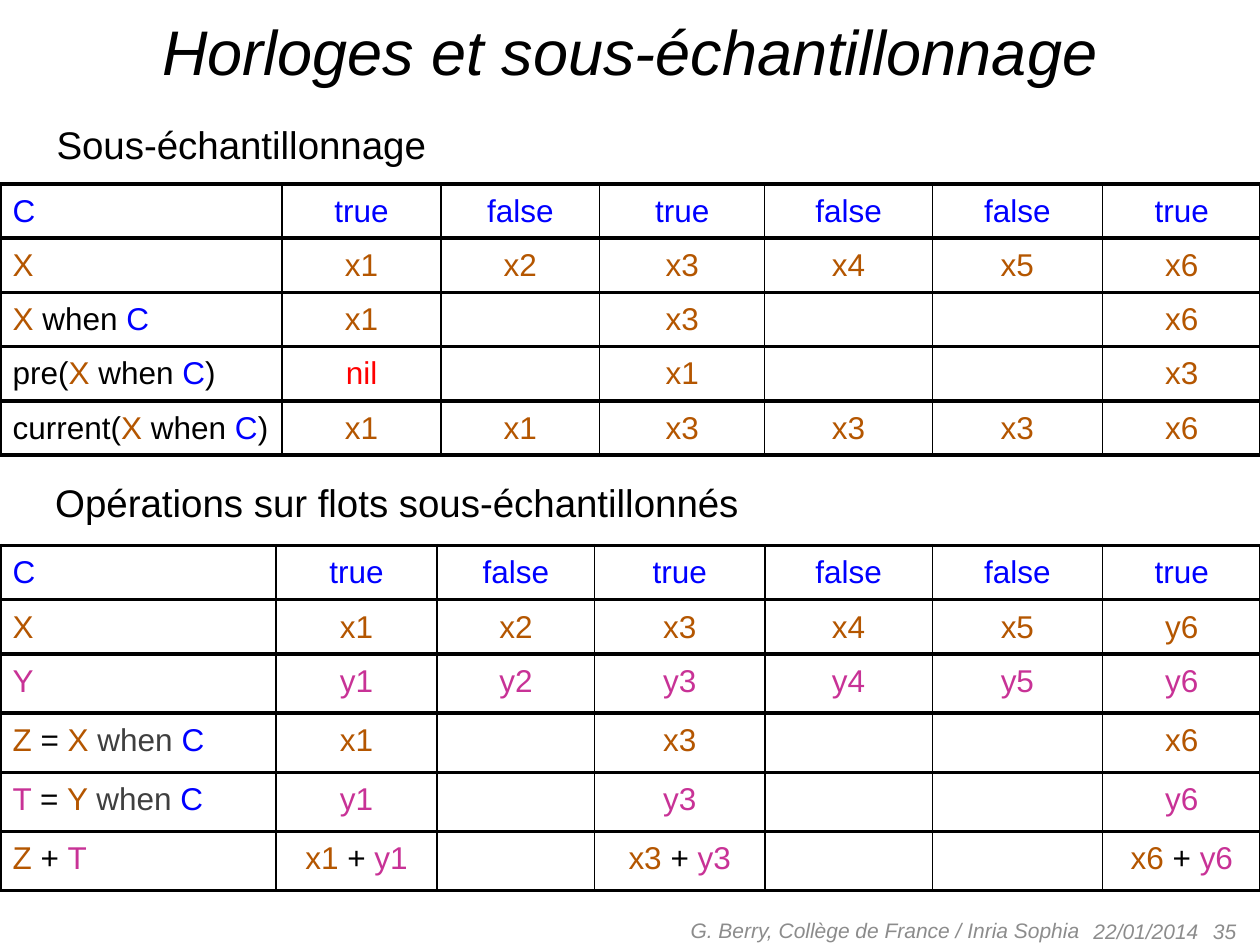
from lxml import etree
from pptx import Presentation
from pptx.dml.color import RGBColor
from pptx.enum.text import MSO_ANCHOR, PP_ALIGN
from pptx.oxml.ns import qn
from pptx.util import Inches, Pt

LEFT, MID, RIGHT = PP_ALIGN.LEFT, PP_ALIGN.CENTER, PP_ALIGN.RIGHT
TOP, CENTER = MSO_ANCHOR.TOP, MSO_ANCHOR.MIDDLE

THEME = {
    "font": "Arial",
    "size": {"title": 36, "head": 22, "cell": 18, "foot": 12},
    "ink": {
        "black": "000000", "blue": "0000FF", "brown": "B45600",
        "pink": "C83296", "red": "FF0000", "dark": "3F3F3F", "gray": "8C8C8C",
    },
    "thick": 2.25,
    "thin": 1,
}

TEXTS = [
    ("Horloges et sous-échantillonnage", (0.25, 0.05, 9.5, 0.71), "title", "black", MID, TOP, True),
    ("Sous-échantillonnage", (0.35, 0.91, 9.61, 0.47), "head", "black", LEFT, TOP, False),
    ("Opérations sur flots sous-échantillonnés", (0.34, 3.75, 5.9, 0.47), "head", "black", LEFT, TOP, False),
    ("22/01/2014", (8.58, 7.19, 1.25, 0.4), "foot", "gray", LEFT, CENTER, True),
    ("35", (7.58, 7.19, 2.33, 0.4), "foot", "gray", RIGHT, CENTER, True),
    ("G. Berry, Collège de France / Inria Sophia", (4.61, 7.18, 4.06, 0.4), "foot", "gray", RIGHT, CENTER, True),
]

X, C = ("X", "brown"), ("C", "blue")
WHEN, CLOSE = (" when ", "black"), (")", "black")
EQUAL, GRAY_WHEN = ("= ", "black"), ("when ", "dark")
CLOCK = ([C], "blue", ["true", "false", "true", "false", "false", "true"])


def add_up(num):
    return [(f"x{num} ", "brown"), ("+ ", "black"), (f"y{num}", "pink")]


TABLES = [
    {
        "top": 1.46,
        "cols": [2.24, 1.26, 1.26, 1.31, 1.33, 1.35, 1.26],
        "rows": [0.43] * 5,
        "cells": [
            CLOCK,
            ([X], "brown", ["x1", "x2", "x3", "x4", "x5", "x6"]),
            ([X, WHEN, C], "brown", ["x1", "", "x3", "", "", "x6"]),
            ([("pre(", "black"), X, WHEN, C, CLOSE], "brown",
             [[("nil", "red")], "", "x1", "", "", "x3"]),
            ([("current(", "black"), X, WHEN, C, CLOSE], "brown",
             ["x1", "x1", "x3", "x3", "x3", "x6"]),
        ],
    },
    {
        "top": 4.33,
        "cols": [2.19, 1.28, 1.25, 1.35, 1.33, 1.35, 1.26],
        "rows": [0.43] * 2 + [0.47] * 4,
        "cells": [
            CLOCK,
            ([X], "brown", ["x1", "x2", "x3", "x4", "x5", "y6"]),
            ([("Y", "pink")], "pink", ["y1", "y2", "y3", "y4", "y5", "y6"]),
            ([("Z ", "brown"), EQUAL, ("X ", "brown"), GRAY_WHEN, C], "brown",
             ["x1", "", "x3", "", "", "x6"]),
            ([("T ", "pink"), EQUAL, ("Y ", "brown"), GRAY_WHEN, C], "pink",
             ["y1", "", "y3", "", "", "y6"]),
            ([("Z ", "brown"), ("+ ", "black"), ("T", "pink")], "black",
             [add_up(1), "", add_up(3), "", "", add_up(6)]),
        ],
    },
]


def write(para, runs, size, align, slant=False):
    para.alignment = align
    para.font.size = Pt(THEME["size"][size])
    for text, ink in runs:
        run = para.add_run()
        run.text = text
        font = run.font
        font.name = THEME["font"]
        font.size = Pt(THEME["size"][size])
        font.italic = slant
        font.color.rgb = RGBColor.from_string(THEME["ink"][ink])


def add_text(slide, text, box, size, ink, align, anchor, slant):
    frame = slide.shapes.add_textbox(*map(Inches, box)).text_frame
    frame.word_wrap = True
    frame.vertical_anchor = anchor
    write(frame.paragraphs[0], [(text, ink)], size, align, slant)


def rule(cell, first, last):
    thick, thin = THEME["thick"], THEME["thin"]
    sides = {"lnL": thick if first else thin, "lnR": thick if last else thin,
             "lnT": thick, "lnB": thick}
    props = cell._tc.get_or_add_tcPr()
    for place, (side, width) in enumerate(sides.items()):
        line = etree.Element(qn(f"a:{side}"), w=str(Pt(width)))
        fill = etree.SubElement(line, qn("a:solidFill"))
        etree.SubElement(fill, qn("a:srgbClr"), val=THEME["ink"]["black"])
        props.insert(place, line)


def add_grid(slide, data):
    cols, rows = data["cols"], data["rows"]
    size = map(Inches, (0, data["top"], sum(cols), sum(rows)))
    grid = slide.shapes.add_table(len(rows), len(cols), *size).table
    grid.first_row = grid.horz_banding = False
    for col, width in zip(grid.columns, cols):
        col.width = Inches(width)
    for row, height, (head, ink, vals) in zip(grid.rows, rows, data["cells"]):
        row.height = Inches(height)
        for spot, (cell, val) in enumerate(zip(row.cells, [head] + vals)):
            cell.fill.background()
            rule(cell, spot == 0, spot == len(cols) - 1)
            runs = [(val, ink)] if isinstance(val, str) and val else val
            para = cell.text_frame.paragraphs[0]
            para.line_spacing = 1.1
            write(para, runs, "cell", MID if spot else LEFT)


def main():
    deck = Presentation()
    deck.slide_width, deck.slide_height = Inches(10), Inches(7.5)
    slide = deck.slides.add_slide(deck.slide_layouts[6])
    for item in TEXTS:
        add_text(slide, *item)
    for data in TABLES:
        add_grid(slide, data)
    deck.save("out.pptx")


if __name__ == "__main__":
    main()
